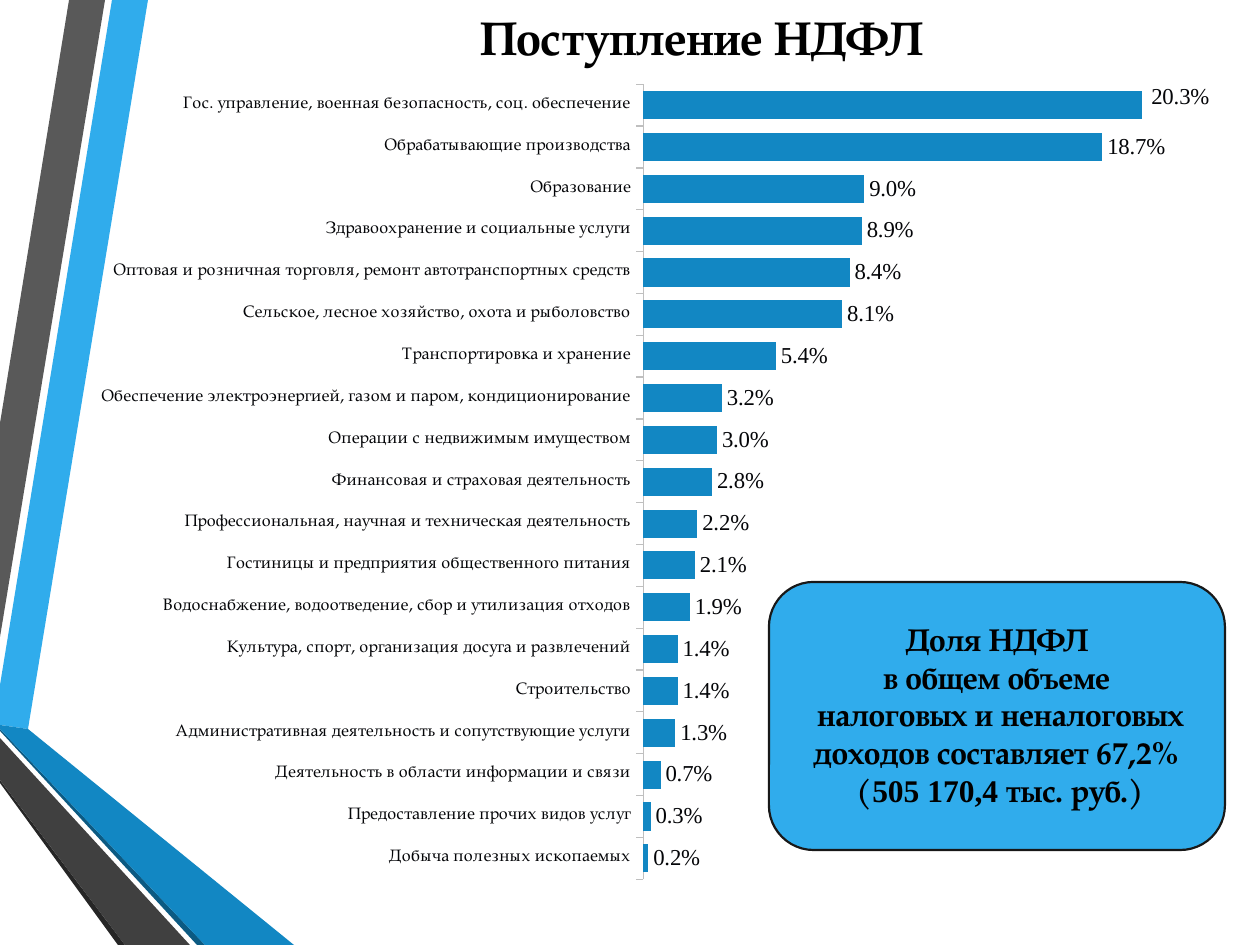
import pptx
import pptx.chart.data
import pptx.dml.color
import pptx.enum.chart
import pptx.enum.shapes
import pptx.enum.text
import pptx.oxml
import pptx.oxml.ns
import pptx.util

PX = 914400 / 126
SERIF = "TeX Gyre Pagella"
ROMAN = "Times New Roman"
INK = "040508"

RIBBONS = [
    ("30ACEC", [(0, 685), (0, 725), (28, 729), (148, 0), (112, 0)]),
    ("595959", [(105, 0), (69, 0), (0, 423), (0, 637)]),
    ("262626", [(0, 780), (0, 783), (118, 945), (125, 945)]),
    ("0C5A82", [(0, 729), (0, 731), (197, 945), (205, 945)]),
    ("1287C3", [(0, 729), (205, 945), (294, 945), (28, 729), (0, 725)]),
    ("404040", [(0, 780), (125, 945), (190, 945), (0, 738)]),
]

SHARES = [
    ("Добыча полезных ископаемых", 0.002),
    ("Предоставление прочих видов услуг", 0.003),
    ("Деятельность в области информации и связи", 0.007),
    ("Административная деятельность и сопутствующие услуги", 0.013),
    ("Строительство", 0.014),
    ("Культура, спорт, организация досуга и развлечений", 0.014),
    ("Водоснабжение, водоотведение, сбор и утилизация отходов", 0.019),
    ("Гостиницы и предприятия общественного питания", 0.021),
    ("Профессиональная, научная и техническая деятельность", 0.022),
    ("Финансовая и страховая деятельность", 0.028),
    ("Операции с недвижимым имуществом", 0.03),
    ("Обеспечение электроэнергией, газом и паром, кондиционирование", 0.032),
    ("Транспортировка и хранение", 0.054),
    ("Сельское, лесное хозяйство, охота и рыболовство", 0.081),
    ("Оптовая и розничная торговля, ремонт автотранспортных средств", 0.084),
    ("Здравоохранение и социальные услуги", 0.089),
    ("Образование", 0.09),
    ("Обрабатывающие производства", 0.187),
    ("Гос. управление, военная безопасность, соц. обеспечение", 0.203),
]

NOTE = [
    "Доля НДФЛ ",
    "в общем объеме ",
    "налоговых и неналоговых доходов составляет 67,2% ",
]


def emu(*sizes):
    return [pptx.util.Emu(round(size * PX)) for size in sizes]


def tint(code):
    return pptx.dml.color.RGBColor.from_string(code)


def paint(shape, code):
    shape.shadow.inherit = False
    shape.fill.solid()
    shape.fill.fore_color.rgb = tint(code)
    shape.line.fill.background()


def style(font, size, name, code, bold=False):
    font.size = pptx.util.Pt(size)
    font.name = name
    font.bold = bold
    font.color.rgb = tint(code)


def add_text(slide, box, lines, size, anchor):
    frame = slide.shapes.add_textbox(*emu(*box)).text_frame
    frame.word_wrap = True
    frame.vertical_anchor = anchor
    for i, line in enumerate(lines):
        para = frame.paragraphs[0] if i == 0 else frame.add_paragraph()
        para.alignment = pptx.enum.text.PP_ALIGN.CENTER
        style(para.font, size, SERIF, "000000", True)
        para.add_run().text = line
    return frame


def add_ribbons(slide, left, top):
    for code, points in RIBBONS:
        spots = [(left + x, top + y) for x, y in points]
        build = slide.shapes.build_freeform(*spots[0], scale=PX)
        build.add_line_segments(spots[1:], close=True)
        paint(build.convert_to_shape(), code)


def make_layout(x, y, size=None):
    """Manual layout; a size makes it the inner plot area."""
    parts = [("x", x), ("y", y)]
    if size:
        parts = [("layoutTarget", "inner"), ("xMode", "edge"), ("yMode", "edge"),
                 *parts, ("w", size[0]), ("h", size[1])]
    inner = "".join(f'<c:{tag} val="{val}"/>' for tag, val in parts)
    space = pptx.oxml.ns.nsdecls("c")
    return pptx.oxml.parse_xml(
        f"<c:layout {space}><c:manualLayout>{inner}</c:manualLayout></c:layout>")


def add_bars(slide, box):
    kinds = pptx.enum.chart
    data = pptx.chart.data.CategoryChartData(number_format="0.0%")
    data.categories = [name for name, _ in SHARES]
    data.add_series("Series 1", [share for _, share in SHARES])
    chart = slide.shapes.add_chart(
        kinds.XL_CHART_TYPE.BAR_CLUSTERED, *emu(*box), data).chart
    chart.has_legend = False
    chart.has_title = False
    style(chart.font, 18, "Cabin", "000000")

    # Plot area
    area = chart._chartSpace.chart.plotArea
    for old in area.findall(pptx.oxml.ns.qn("c:layout")):
        area.remove(old)
    area.insert(0, make_layout(0.49, 0.01, (0.51, 0.965)))

    # Axes
    value = chart.value_axis
    value.visible = False
    value.has_major_gridlines = False
    value.minimum_scale = 0
    value.maximum_scale = 0.25
    names = chart.category_axis
    names.major_tick_mark = kinds.XL_TICK_MARK.OUTSIDE
    names.format.line.color.rgb = tint("BFBFBF")
    style(names.tick_labels.font, 9.5, SERIF, INK)

    # Bars and labels
    plot = chart.plots[0]
    plot.gap_width = 49
    plot.vary_by_categories = False
    series = plot.series[0]
    series.format.fill.solid()
    series.format.fill.fore_color.rgb = tint("1287C3")
    labels = series.data_labels
    labels.show_value = True
    labels.number_format = "0.0%"
    labels.number_format_is_linked = False
    labels.position = kinds.XL_LABEL_POSITION.OUTSIDE_END
    style(labels.font, 13, ROMAN, INK)

    # The longest bar has its label nudged up and right
    top = series.points[len(SHARES) - 1].data_label
    top.position = kinds.XL_LABEL_POSITION.OUTSIDE_END
    style(top.font, 13, ROMAN, INK)
    top._dLbl.insert(1, make_layout(0.004, -0.009))


def add_note(slide, box):
    left, top, width, height = box
    panel = slide.shapes.add_shape(
        pptx.enum.shapes.MSO_SHAPE.ROUNDED_RECTANGLE, *emu(*box))
    paint(panel, "30ACEC")
    panel.line.color.rgb = tint("181818")
    panel.line.width = pptx.util.Pt(1.25)
    frame = add_text(slide, (left + 8, top + 15, width - 9, height - 50),
                     NOTE + ["("], 18, pptx.enum.text.MSO_ANCHOR.BOTTOM)
    last = frame.paragraphs[-1]
    total = last.add_run()
    total.text = "505 170,4 "
    total.font.name = ROMAN
    last.add_run().text = "тыс. руб.)"


def main():
    deck = pptx.Presentation()
    deck.slide_width, deck.slide_height = emu(1260, 945)
    slide = deck.slides.add_slide(deck.slide_layouts[6])
    add_ribbons(slide, 0, 0)
    add_text(slide, (145, 6, 1113, 62), ["Поступление НДФЛ"], 27,
             pptx.enum.text.MSO_ANCHOR.MIDDLE)
    add_bars(slide, (54, 76, 1203, 824))
    add_note(slide, (769, 582, 456, 268))
    deck.save("out.pptx")


if __name__ == "__main__":
    main()
